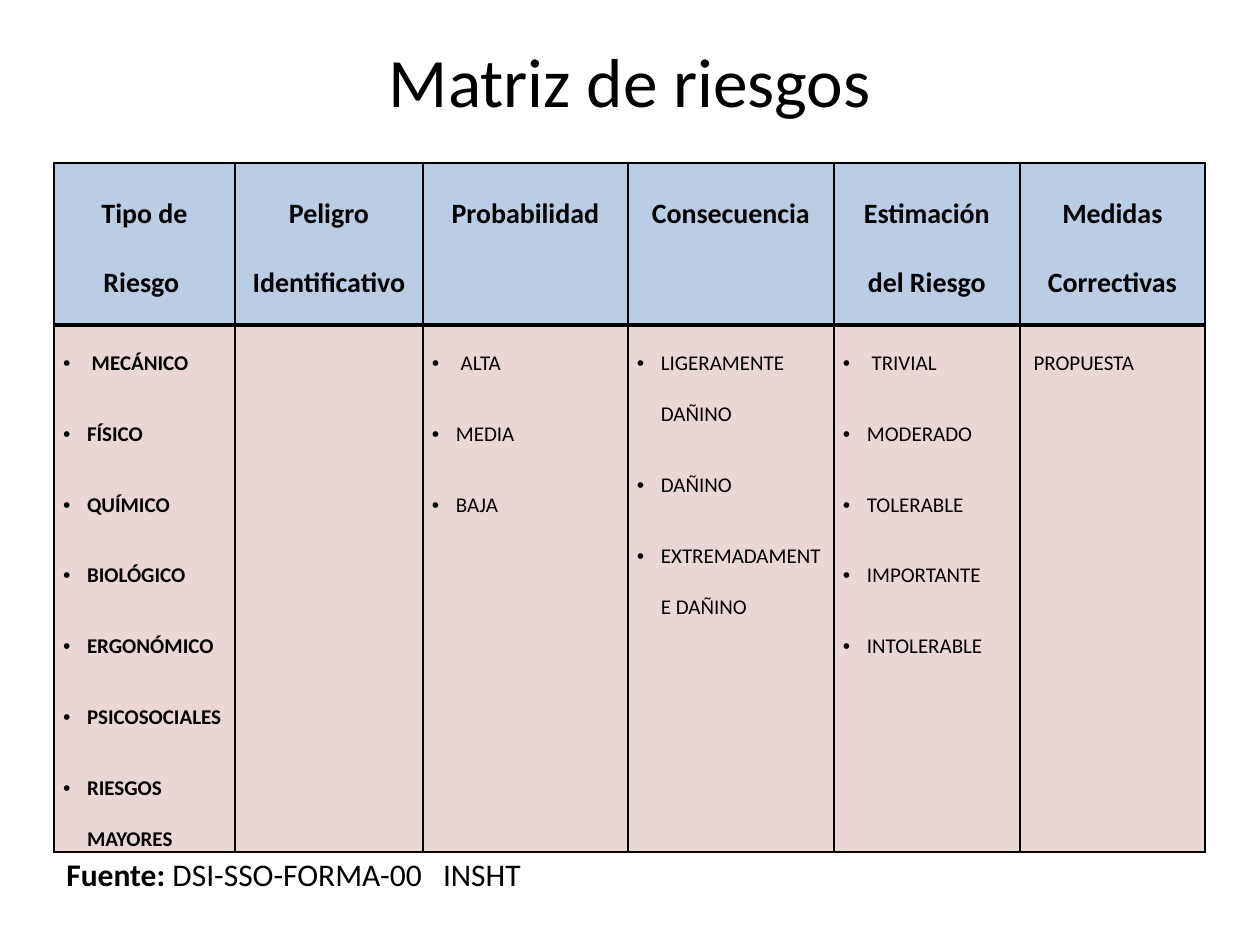
"""Build the risk matrix slide: a title, a six-column table and its source."""
from lxml.etree import SubElement
from pptx import Presentation
from pptx.dml.color import RGBColor
from pptx.enum.text import MSO_ANCHOR, PP_ALIGN
from pptx.oxml import parse_xml
from pptx.oxml.ns import nsdecls, qn
from pptx.util import Pt

PX = 914400 // 126
TOP = MSO_ANCHOR.TOP
CENTER, JUSTIFY = PP_ALIGN.CENTER, PP_ALIGN.JUSTIFY
FONT = "Calibri"
COLORS = {"head": "B9CDE5", "body": "953735", "ink": "000000"}
WIDTHS = [181, 188, 205, 206, 186, 185]
HEADS = ["Tipo de Riesgo ", "Peligro Identificativo", "Probabilidad",
         "Consecuencia", "Estimación del Riesgo", "Medidas Correctivas"]
ITEMS = [
    [" MECÁNICO", "FÍSICO", "QUÍMICO", "BIOLÓGICO", "ERGONÓMICO",
     "PSICOSOCIALES", "RIESGOS MAYORES"],
    [],
    [" ALTA", "MEDIA ", "BAJA"],
    ["LIGERAMENTE DAÑINO", "DAÑINO", "EXTREMADAMENTE DAÑINO"],
    [" TRIVIAL", "MODERADO", "TOLERABLE", "IMPORTANTE", "INTOLERABLE"],
    [" PROPUESTA"],
]


def style(para, size, bold=False):
    font = para.font
    font.name, font.size, font.bold = FONT, Pt(size), bold
    font.color.rgb = RGBColor.from_string(COLORS["ink"])


def dress(cell, color, edges):
    cell.margin_left = cell.margin_right = 9 * PX
    cell.margin_top = cell.margin_bottom = 0
    cell.fill.solid()
    cell.fill.fore_color.rgb = RGBColor.from_string(color)
    props = cell._tc.get_or_add_tcPr()
    for spot, (side, width) in enumerate(edges.items()):
        props.insert(spot, parse_xml(
            f'<a:ln{side} {nsdecls("a")} w="{Pt(width)}"><a:solidFill>'
            f'<a:srgbClr val="{COLORS["ink"]}"/></a:solidFill></a:ln{side}>'))


deck = Presentation()
deck.slide_width, deck.slide_height = 1260 * PX, 945 * PX
slide = deck.slides.add_slide(deck.slide_layouts[5])

title = slide.shapes.title
title.left, title.top, title.width, title.height = (
    n * PX for n in (63, 38, 1134, 157))
title.text_frame.text = "Matriz de riesgos"
title.text_frame.vertical_anchor = TOP
title.text_frame.margin_top = 0
para = title.text_frame.paragraphs[0]
para.alignment = CENTER
style(para, 39.6)

table = slide.shapes.add_table(
    2, len(WIDTHS), 54 * PX, 163 * PX, sum(WIDTHS) * PX, 647 * PX).table
table.first_row = table.horz_banding = False
table.rows[0].height, table.rows[1].height = 162 * PX, 485 * PX

for col, (width, head, items) in enumerate(zip(WIDTHS, HEADS, ITEMS)):
    table.columns[col].width = width * PX
    cell = table.cell(0, col)
    dress(cell, COLORS["head"], {"L": 1, "R": 1, "T": 1, "B": 2})
    cell.text = head
    para = cell.text_frame.paragraphs[0]
    para.alignment, para.line_spacing = CENTER, 2.0
    style(para, 16, True)

    cell = table.cell(1, col)
    dress(cell, COLORS["body"], {"L": 1, "R": 1, "T": 2, "B": 1})
    tint = cell._tc.tcPr.find(qn("a:solidFill"))[0]
    SubElement(tint, qn("a:alpha")).set("val", "20000")
    if not items:
        continue
    cell.text = "\n".join(items)
    for para in cell.text_frame.paragraphs:
        para.alignment, para.line_spacing = JUSTIFY, 2.0
        para.space_after = Pt(11.2)
        if len(items) > 1:
            props = para._p.get_or_add_pPr()
            props.set("marL", str(24 * PX))
            props.set("indent", str(-24 * PX))
            SubElement(props, qn("a:buFont")).set("typeface", "Arial")
            SubElement(props, qn("a:buChar")).set("char", "•")
        style(para, 12, col == 0)

note = slide.shapes.add_textbox(54 * PX, 849 * PX, 484 * PX, 50 * PX)
para = note.text_frame.paragraphs[0]
style(para, 18)
for text, bold in (("Fuente: ", True), ("DSI-SSO-FORMA-00   INSHT", False)):
    run = para.add_run()
    run.text, run.font.bold = text, bold

deck.save("out.pptx")
